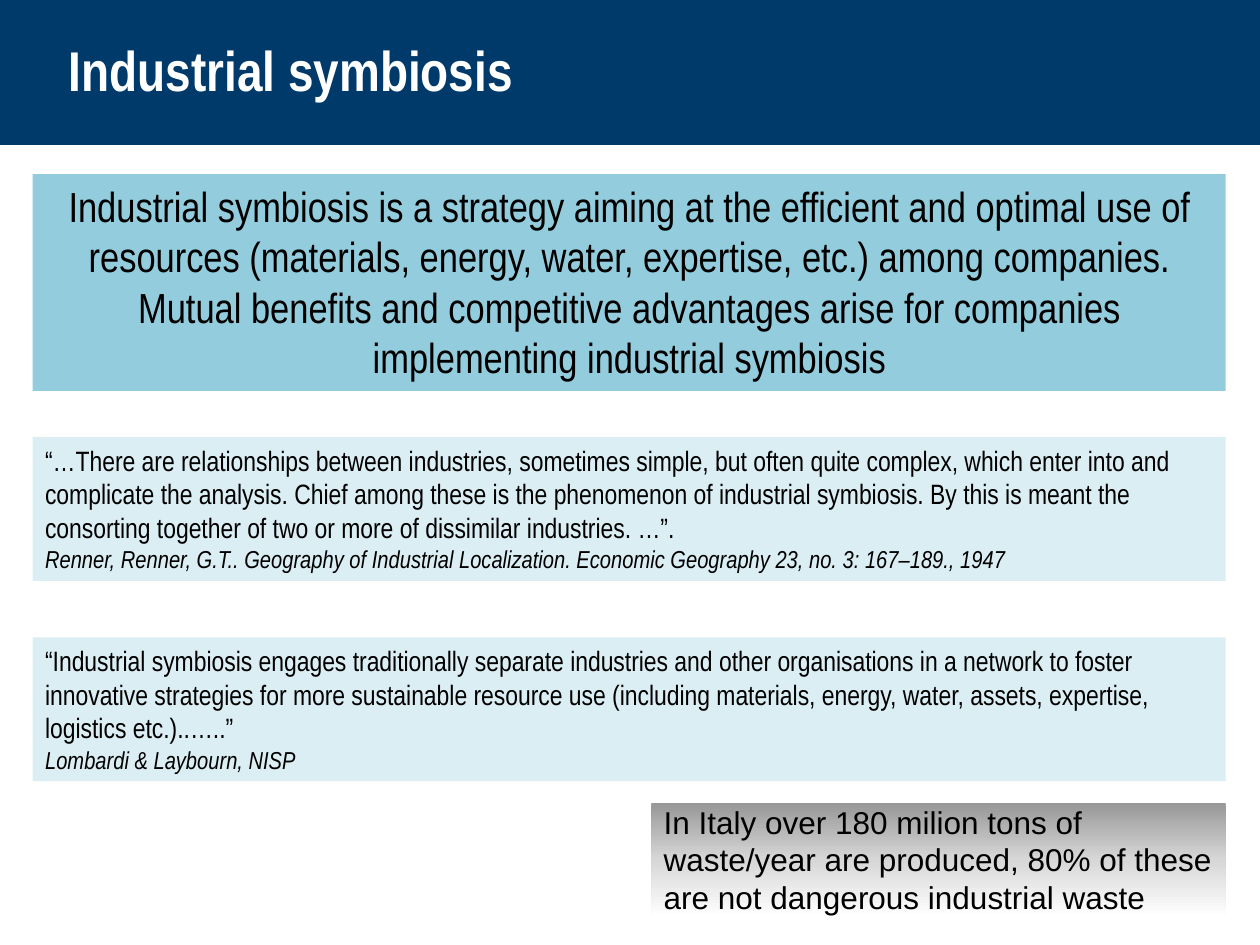
from copy import deepcopy

from pptx import Presentation
from pptx.dml.color import RGBColor
from pptx.enum.shapes import MSO_SHAPE as Kind
from pptx.enum.text import MSO_ANCHOR as Anchor, MSO_AUTO_SIZE as Fit, PP_ALIGN as Align
from pptx.oxml.ns import qn
from pptx.util import Cm, Pt

NARROW = "Arial Narrow"
LEFT, WIDE = 0.66, 24.05  # shared column of the boxes, in cm


def hue(code):
    return RGBColor.from_string(code)


def add_rect(slide, left, top, width, height, fill=None):
    rect = slide.shapes.add_shape(Kind.RECTANGLE, Cm(left), Cm(top), Cm(width), Cm(height))
    rect.shadow.inherit = False
    rect.line.fill.background()
    if fill:
        rect.fill.solid()
        rect.fill.fore_color.rgb = hue(fill)
    return rect


def set_frame(shape, anchor=Anchor.TOP, pad=0.13):
    frame = shape.text_frame
    frame.word_wrap = True
    frame.auto_size = Fit.SHAPE_TO_FIT_TEXT
    frame.vertical_anchor = anchor
    frame.margin_left = frame.margin_right = Cm(0.25)
    frame.margin_top = frame.margin_bottom = Cm(pad)
    return frame


def add_run(para, text, size, face=NARROW, color="000000", bold=False, italic=False,
            align=Align.LEFT):
    para.alignment = align
    run = para.add_run()
    run.text = text
    font = run.font
    font.name, font.size = face, Pt(size)
    font.bold, font.italic = bold, italic
    font.color.rgb = hue(color)


def add_title(slide, text):
    title = slide.shapes.title
    title.left, title.top, title.width, title.height = Cm(1.14), Cm(0.71), Cm(22.86), Cm(1.37)
    frame = set_frame(title, Anchor.MIDDLE, 0)
    add_run(frame.paragraphs[0], text, 32, color="FFFFFF", bold=True)


def add_quote(slide, top, text, source):
    frame = set_frame(add_rect(slide, LEFT, top, WIDE, 2.9, "DBEEF4"))
    add_run(frame.paragraphs[0], text, 16)
    add_run(frame.add_paragraph(), source, 14, italic=True)


def fade_down(shape, colors):
    """Fill with evenly spaced gradient stops from top to bottom."""
    fill = shape.fill
    fill.gradient()
    fill.gradient_angle = 270
    stops = shape._element.spPr.find(qn("a:gradFill")).find(qn("a:gsLst"))
    for _ in colors[2:]:
        stops.append(deepcopy(stops[0]))
    for i, (stop, color) in enumerate(zip(fill.gradient_stops, colors)):
        stop.position = i / (len(colors) - 1)
        stop.color.rgb = hue(color)


def main():
    deck = Presentation()
    deck.slide_width, deck.slide_height = Cm(25.4), Cm(19.05)
    slide = deck.slides.add_slide(deck.slide_layouts[5])

    # Header band, placed behind the title
    band = add_rect(slide, 0, 0, 25.4, 2.92, "003A6A")
    slide.shapes.title._element.addprevious(band._element)
    add_title(slide, "Industrial symbiosis")

    # Definition
    frame = set_frame(add_rect(slide, LEFT, 3.51, WIDE, 4.37, "93CDDD"))
    add_run(frame.paragraphs[0],
            "Industrial symbiosis is a strategy aiming at the efficient and optimal use of "
            "resources (materials, energy, water, expertise, etc.) among companies. Mutual "
            "benefits and competitive advantages arise for companies implementing "
            "industrial symbiosis", 24, align=Align.CENTER)

    # Quotations
    add_quote(slide, 8.81,
              "“…There are relationships between industries, sometimes simple, but often "
              "quite complex, which enter into and complicate the analysis. Chief among "
              "these is the phenomenon of industrial symbiosis. By this is meant the "
              "consorting together of two or more of dissimilar industries. …”.",
              "Renner, Renner, G.T.. Geography of Industrial Localization. "
              "Economic Geography 23, no. 3: 167–189., 1947")
    add_quote(slide, 12.85,
              "“Industrial symbiosis engages traditionally separate industries and other "
              "organisations in a network to foster innovative strategies for more "
              "sustainable resource use (including materials, energy, water, assets, "
              "expertise, logistics etc.)..…..”",
              "Lombardi & Laybourn, NISP")

    # Waste figures
    note = add_rect(slide, 13.13, 16.18, 11.58, 2.31)
    fade_down(note, ["979797", "D7D7D7", "FFFFFF"])
    frame = set_frame(note, pad=0)
    add_run(frame.paragraphs[0],
            "In Italy over 180 milion tons of waste/year are produced, 80% of these are "
            "not dangerous industrial waste", 18, face="Arial")

    deck.save("out.pptx")


if __name__ == "__main__":
    main()
